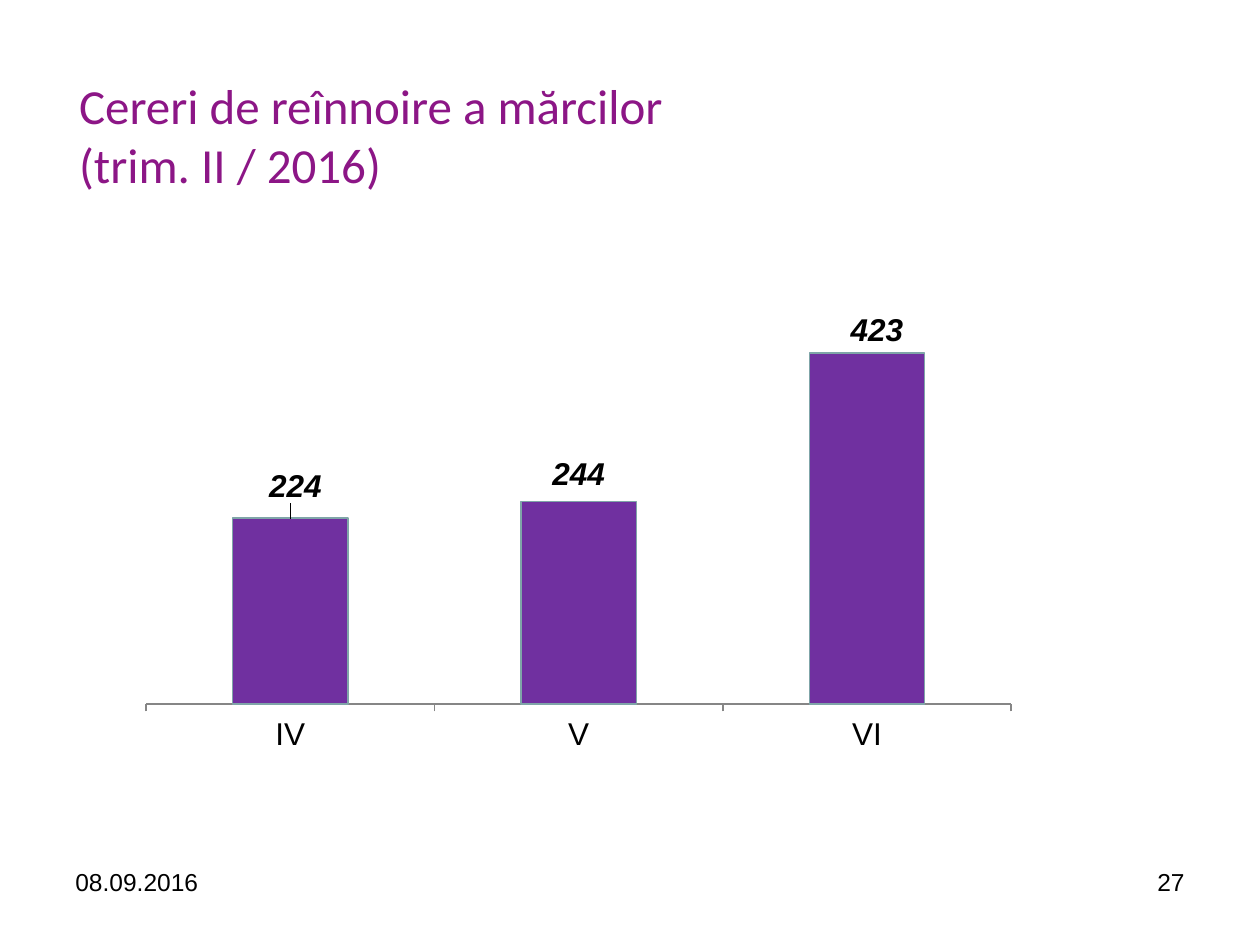
import pptx
import pptx.chart.data
import pptx.dml.color
import pptx.enum.chart
import pptx.enum.text
import pptx.oxml
import pptx.oxml.ns
import pptx.util

Inches = pptx.util.Inches
Pt = pptx.util.Pt
RGBColor = pptx.dml.color.RGBColor
Align = pptx.enum.text.PP_ALIGN
Anchor = pptx.enum.text.MSO_ANCHOR

BLACK = RGBColor(0x00, 0x00, 0x00)
MAGENTA = RGBColor(0x8C, 0x16, 0x86)
PURPLE = RGBColor(0x70, 0x30, 0xA0)
TEAL = RGBColor(0x7F, 0xA5, 0xA8)
GREY = RGBColor(0x86, 0x86, 0x86)

TITLE_FONT = {"name": "Calibri", "size": Pt(28)}
FOOTER_FONT = {"name": "Arial", "size": Pt(14)}
CHART_FONT = {"name": "Arial", "size": Pt(18), "bold": False}
LABEL_FONT = {"name": "Arial", "size": Pt(18), "bold": True, "italic": True}

MONTHS = {"IV": 224, "V": 244, "VI": 423}
LABEL_SHIFTS = [(0.005, -0.02), (0, -0.01), (0.01, 0)]
PLOT_AREA = {"x": 0.08, "y": 0.1, "w": 0.87, "h": 0.79}


def set_font(font, values, color):
    """Apply format values and a colour to a font."""
    for name, value in values.items():
        setattr(font, name, value)
    font.color.rgb = color


def add_text(page, box, lines, values, color, align=Align.LEFT, anchor=Anchor.TOP):
    """Place lines of text in the given box."""
    frame = page.shapes.add_textbox(*map(Inches, box)).text_frame
    frame.word_wrap = True
    frame.vertical_anchor = anchor
    frame.text = "\n".join(lines)
    for para in frame.paragraphs:
        para.alignment = align
        for span in para.runs:
            set_font(span.font, values, color)


def make_layout(values, inner=False):
    """Return a manual chart layout element."""
    tags = '<c:layoutTarget val="inner"/>' if inner else ""
    if inner:
        tags += '<c:xMode val="edge"/><c:yMode val="edge"/>'
    tags += "".join(f'<c:{name} val="{value}"/>' for name, value in values.items())
    namespace = pptx.oxml.ns.nsdecls("c")
    return pptx.oxml.parse_xml(
        f"<c:layout {namespace}><c:manualLayout>{tags}</c:manualLayout></c:layout>"
    )


def format_labels(series):
    """Show each value above its column, shifted a little."""
    for index, (x, y) in enumerate(LABEL_SHIFTS):
        label = series.points[index].data_label
        set_font(label.font, LABEL_FONT, BLACK)
        label.position = pptx.enum.chart.XL_LABEL_POSITION.OUTSIDE_END
    elements = series._element.findall(".//" + pptx.oxml.ns.qn("c:dLbl"))
    for element, (x, y) in zip(elements, LABEL_SHIFTS):
        element.find(pptx.oxml.ns.qn("c:idx")).addnext(make_layout({"x": x, "y": y}))


def add_renewals_chart(page, box):
    """Place the column chart of monthly renewals in the box."""
    data = pptx.chart.data.CategoryChartData()
    data.categories = list(MONTHS)
    data.add_series("Series 1", list(MONTHS.values()))
    kind = pptx.enum.chart.XL_CHART_TYPE.COLUMN_CLUSTERED
    chart = page.shapes.add_chart(kind, *map(Inches, box), data).chart
    chart.has_legend = False
    chart.has_title = False
    set_font(chart.font, CHART_FONT, BLACK)

    axis = chart.value_axis
    scale = {"visible": False, "has_major_gridlines": False,
             "minimum_scale": 0, "maximum_scale": 450}
    for name, value in scale.items():
        setattr(axis, name, value)
    months = chart.category_axis
    months.major_tick_mark = pptx.enum.chart.XL_TICK_MARK.OUTSIDE
    months.format.line.color.rgb = GREY
    months.format.line.width = Pt(1)

    plot = chart.plots[0]
    plot.gap_width = 150
    plot.vary_by_categories = False
    series = plot.series[0]
    series.format.fill.solid()
    series.format.fill.fore_color.rgb = PURPLE
    series.format.line.color.rgb = TEAL
    series.format.line.width = Pt(0.75)
    format_labels(series)

    area = chart._chartSpace.chart.plotArea
    for old in area.findall(pptx.oxml.ns.qn("c:layout")):
        area.remove(old)
    area.insert(0, make_layout(PLOT_AREA, inner=True))


def add_footer(page, box):
    """Place the date at the left and the page number at the right."""
    left, top, width, height = box
    part = 2.33
    add_text(page, (left, top, part, height), ["08.09.2016"], FOOTER_FONT, BLACK)
    add_text(page, (left + width - part, top, part, height), ["27"],
             FOOTER_FONT, BLACK, Align.RIGHT)


def main():
    """Build and save the slide."""
    deck = pptx.Presentation()
    deck.slide_width, deck.slide_height = Inches(10), Inches(7.5)
    page = deck.slides.add_slide(deck.slide_layouts[6])
    add_footer(page, (0.5, 6.83, 9, 0.52))
    add_text(page, (0.53, 0.44, 8.17, 1.25),
             ["Cereri de reînnoire a mărcilor", "(trim. II / 2016)"],
             TITLE_FONT, MAGENTA, anchor=Anchor.MIDDLE)
    add_renewals_chart(page, (0.53, 2.25, 7.89, 3.75))
    deck.save("out.pptx")


if __name__ == "__main__":
    main()
